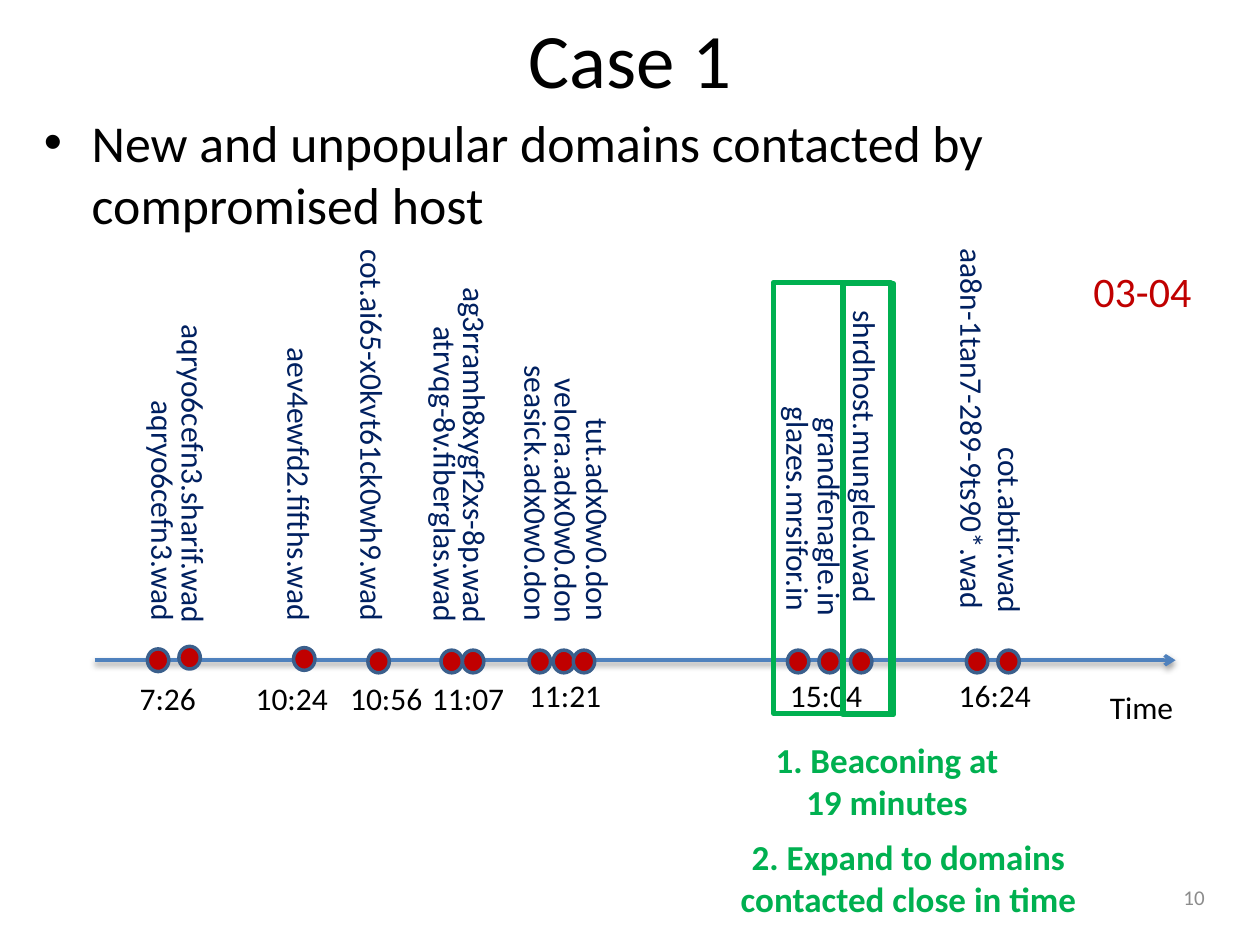
"""Build the Case 1 slide: a timeline of domains contacted by a compromised host."""
from lxml import etree
from pptx import Presentation
from pptx.dml.color import RGBColor
from pptx.enum.shapes import MSO_CONNECTOR, MSO_SHAPE
from pptx.enum.text import MSO_ANCHOR, PP_ALIGN
from pptx.oxml.ns import qn
from pptx.util import Inches, Pt

LEFT, CENTER, RIGHT = PP_ALIGN.LEFT, PP_ALIGN.CENTER, PP_ALIGN.RIGHT
TOP, MIDDLE = MSO_ANCHOR.TOP, MSO_ANCHOR.MIDDLE
OVAL, RECT = MSO_SHAPE.OVAL, MSO_SHAPE.RECTANGLE
STRAIGHT = MSO_CONNECTOR.STRAIGHT

FONT = "Calibri"
BLACK, GRAY, NAVY, RED, GREEN = "000000", "8C8C8C", "002060", "C00000", "00B050"
AXIS, DOT_LINE = "4F81BD", "3A5F8C"

TITLE = "Case 1"
BULLET = "New and unpopular domains contacted by compromised host"
AXIS_X, AXIS_Y = (0.75, 9.33), 5.24
DOT_W, DOT_H = 0.17, 0.18

DOTS = [
    (1.17, 5.15), (1.42, 5.13), (2.33, 5.14),
    *((x, 5.16) for x in (2.92, 3.5, 3.67, 4.2, 4.39, 4.55,
                          6.25, 6.5, 6.75, 7.67, 7.92)),
]
TIMES = [
    ("7:26", 1.01, 5.34), ("10:24", 1.93, 5.34), ("10:56", 2.68, 5.34),
    ("11:07", 3.33, 5.34), ("11:21", 4.1, 5.32), ("15:04", 6.17, 5.32),
    ("16:24", 7.51, 5.32),
]
# (domain, centre x, top, length, thickness)
DOMAINS = [
    ("aqryo6cefn3.wad", 1.3, 3.08, 2.03, 0.4),
    (" aqryo6cefn3.sharif.wad", 1.54, 2.42, 2.65, 0.4),
    ("aev4ewfd2.fifths.wad", 2.38, 2.66, 2.4, 0.4),
    ("cot.ai65-x0kvt61ck0wh9.wad", 2.96, 1.88, 3.18, 0.4),
    ("atrvqg-8v.fiberglas.wad", 3.54, 2.49, 2.58, 0.4),
    ("ag3rramh8xygf2xs-8p.wad", 3.79, 2.18, 2.9, 0.37),
    ("seasick.adx0w0.don", 4.26, 2.8, 2.25, 0.4),
    ("velora.adx0w0.don", 4.5, 2.91, 2.36, 0.4),
    ("tut.adx0w0.don", 4.8, 3.22, 2.21, 0.3),
    (" glazes.mrsifor.in", 6.34, 3.07, 2, 0.4),
    (" grandfenagle.in", 6.59, 3.16, 2, 0.4),
    (" shrdhost.mungled.wad", 6.87, 2.31, 3.5, 0.4),
    (" aa8n-1tan7-289-9ts90*.wad", 7.72, 1.82, 3.15, 0.4),
    ("cot.abtir.wad", 8.07, 3.45, 1.68, 0.3),
]
NOTES = [
    ("1. Beaconing at 19 minutes", 6, 5.81, 2.08, 0.77),
    ("2. Expand to domains contacted close in time", 5.67, 6.58, 3.08, 0.77),
]
FRAMES = [(6.69, 2.25, 0.4, 3.42), (6.14, 2.24, 0.93, 3.42)]


def rgb(color):
    """Turn a hex string into a colour."""
    return RGBColor.from_string(color)


def add_text(s, text, x, y, w, h, size=18, color=BLACK, align=LEFT, anchor=TOP, bold=False):
    """Add a wrapped text box with one formatted paragraph."""
    sp = s.shapes.add_textbox(Inches(x), Inches(y), Inches(w), Inches(h))
    tf = sp.text_frame
    tf.word_wrap = True
    tf.vertical_anchor = anchor
    tf.text = text
    p = tf.paragraphs[0]
    p.alignment = align
    font = p.runs[0].font
    font.name, font.size, font.bold = FONT, Pt(size), bold
    font.color.rgb = rgb(color)
    return sp


def add_bullet(sp):
    """Give the first paragraph a hanging bullet."""
    pPr = sp.text_frame.paragraphs[0]._p.get_or_add_pPr()
    pPr.set("marL", str(Inches(0.38)))
    pPr.set("indent", str(-Inches(0.38)))
    etree.SubElement(pPr, qn("a:buFont")).set("typeface", "Arial")
    etree.SubElement(pPr, qn("a:buChar")).set("char", "•")


def add_outline(s, kind, x, y, w, h, line, width, fill=None):
    """Add an outlined shape, filled when a colour is given."""
    sp = s.shapes.add_shape(kind, Inches(x), Inches(y), Inches(w), Inches(h))
    sp.shadow.inherit = False
    sp.line.color.rgb = rgb(line)
    sp.line.width = Pt(width)
    if fill:
        sp.fill.solid()
        sp.fill.fore_color.rgb = rgb(fill)
    else:
        sp.fill.background()


def add_axis(s):
    """Add the time arrow with its soft shadow."""
    x1, x2 = AXIS_X
    cx = s.shapes.add_connector(STRAIGHT, Inches(x1), Inches(AXIS_Y), Inches(x2), Inches(AXIS_Y))
    cx.line.color.rgb = rgb(AXIS)
    cx.line.width = Pt(2)
    etree.SubElement(cx.line._get_or_add_ln(), qn("a:tailEnd")).set("type", "arrow")
    effects = etree.SubElement(cx._element.spPr, qn("a:effectLst"))
    shadow = etree.SubElement(effects, qn("a:outerShdw"), blurRad=str(Pt(3.1)),
                              dist=str(Pt(1.6)), dir="5400000", rotWithShape="0")
    color = etree.SubElement(shadow, qn("a:srgbClr"), val=BLACK)
    etree.SubElement(color, qn("a:alpha"), val="38000")


def main():
    """Compose and save the slide."""
    prs = Presentation()
    prs.slide_width, prs.slide_height = Inches(10), Inches(7.5)
    s = prs.slides.add_slide(prs.slide_layouts[6])

    add_text(s, TITLE, 0.5, -0.17, 9, 1.25, 44, align=CENTER, anchor=MIDDLE)
    add_bullet(add_text(s, BULLET, 0.25, 0.83, 9.5, 0.92, 29.6))
    add_text(s, "10", 7.33, 6.92, 2.33, 0.4, 12, GRAY, RIGHT, MIDDLE)

    add_axis(s)
    add_text(s, "Time", 8.71, 5.41, 0.8, 0.4)
    for x, y in DOTS:
        add_outline(s, OVAL, x, y, DOT_W, DOT_H, DOT_LINE, 2, RED)
    for text, x, y in TIMES:
        add_text(s, text, x, y, 0.99, 0.4)
    for text, mid, top, length, thick in DOMAINS:
        x, y = mid - length / 2, top + (length - thick) / 2
        add_text(s, text, x, y, length, thick, color=NAVY).rotation = 90
    add_text(s, "03-04", 8.58, 2.06, 1.04, 0.5, 24, RED)

    for text, *box in NOTES:
        add_text(s, text, *box, 20, GREEN, CENTER, bold=True)
    for box in FRAMES:
        add_outline(s, RECT, *box, GREEN, 3)
    prs.save("out.pptx")


if __name__ == "__main__":
    main()
